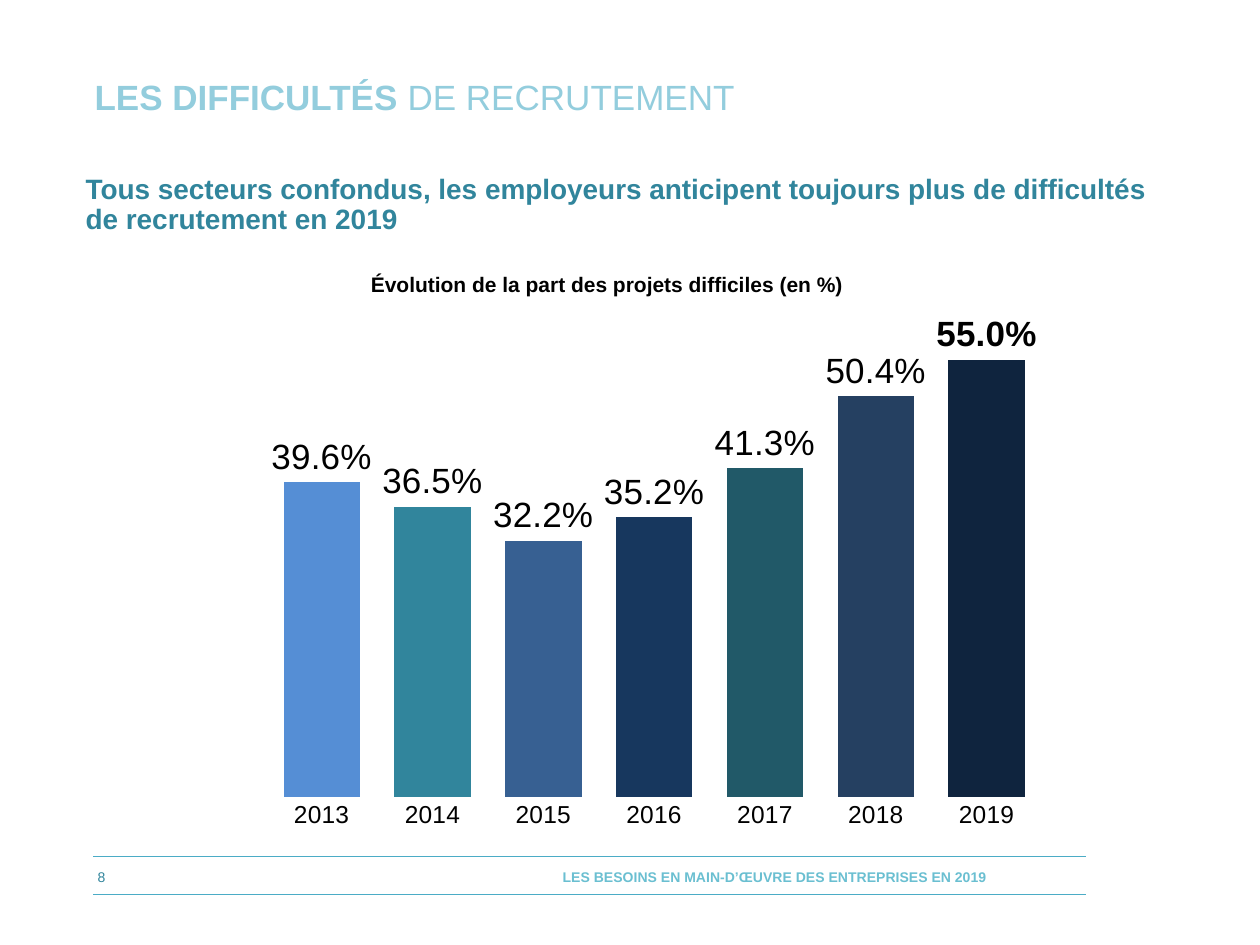
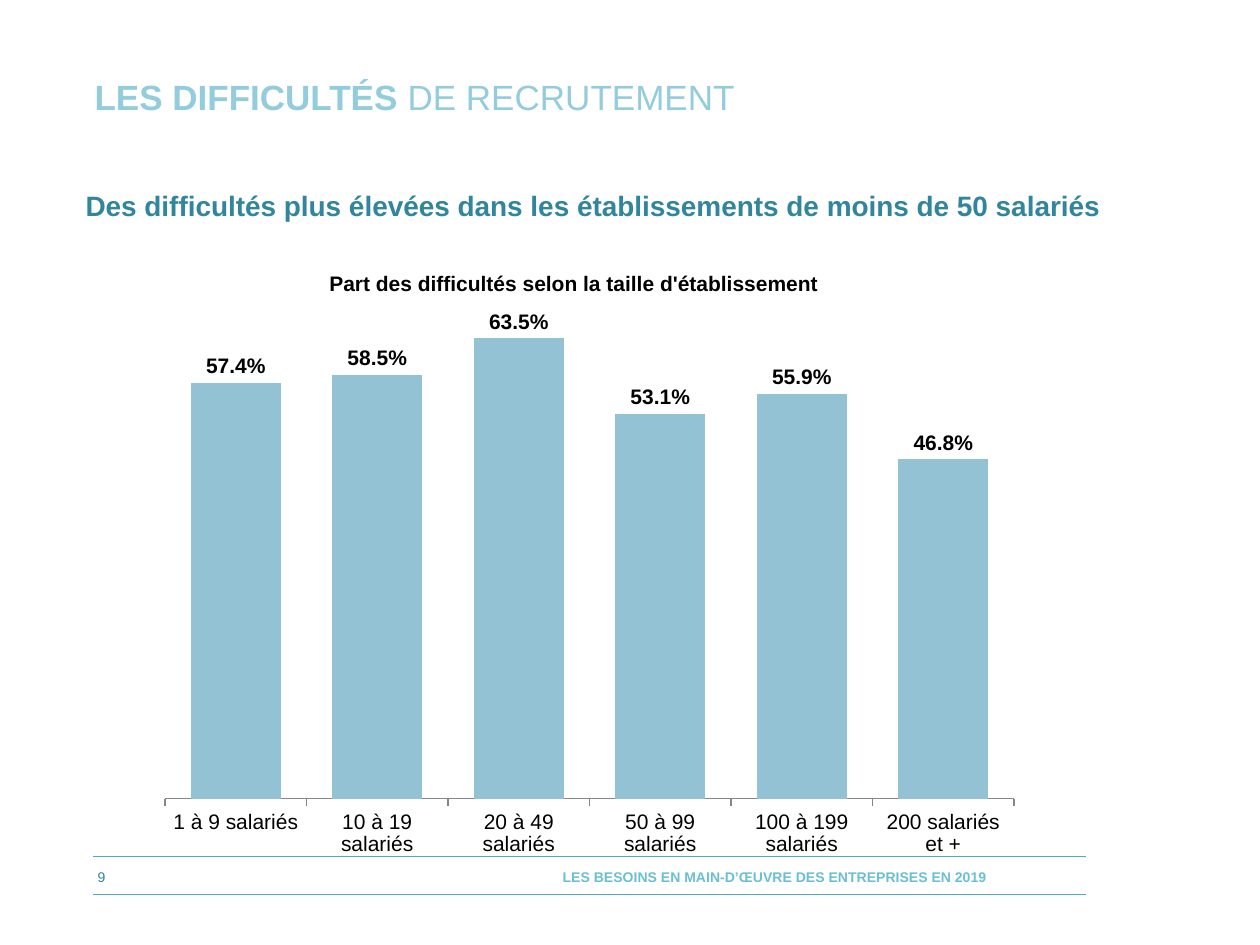
from pptx import Presentation
from pptx.chart.data import CategoryChartData
from pptx.dml.color import RGBColor
from pptx.enum.chart import XL_CHART_TYPE, XL_LABEL_POSITION, XL_TICK_MARK
from pptx.enum.shapes import MSO_CONNECTOR
from pptx.enum.text import MSO_ANCHOR, MSO_AUTO_SIZE, PP_ALIGN
from pptx.oxml import parse_xml
from pptx.oxml.ns import nsdecls, qn
from pptx.util import Pt

COLUMN = XL_CHART_TYPE.COLUMN_CLUSTERED
OUTSIDE = XL_LABEL_POSITION.OUTSIDE_END
NO_TICK, TICK_OUT = XL_TICK_MARK.NONE, XL_TICK_MARK.OUTSIDE
STRAIGHT = MSO_CONNECTOR.STRAIGHT
TOP, MIDDLE = MSO_ANCHOR.TOP, MSO_ANCHOR.MIDDLE
LEFT, CENTER = PP_ALIGN.LEFT, PP_ALIGN.CENTER
NO_FIT = MSO_AUTO_SIZE.NONE

FONT = "Arial"
COLORS = {
    "title": "93CDDD",
    "lead": "31859C",
    "foot": "6ABFD1",
    "rule": "4BACC6",
    "text": "000000",
    "axis": "868686",
    "bar": "93C2D4",
}
YEAR_BARS = ["558ED5", "31859C", "376092", "17375E", "215968", "254061", "0F243E"]
TITLE_BOX = (46.8, 42.5, 640, 28.8)
FOOT_BOX = (53.3, 489.6, 567.3, 21.6)
TITLE = [("LES DIFFICULTÉS ", True), ("DE RECRUTEMENT", False)]
FOOTER = "LES BESOINS EN MAIN-D’ŒUVRE DES ENTREPRISES EN 2019"

YEARS = {
    "2013": 0.396, "2014": 0.365, "2015": 0.322, "2016": 0.352,
    "2017": 0.413, "2018": 0.504, "2019": 0.55,
}
SIZES = {
    "1 à 9 salariés": 0.574, "10 à 19 salariés": 0.585,
    "20 à 49 salariés": 0.635, "50 à 99 salariés": 0.531,
    "100 à 199 salariés": 0.559, "200 salariés et +": 0.468,
}


def paint(fill, color):
    """Make a fill solid in a hex colour."""
    fill.solid()
    fill.fore_color.rgb = RGBColor.from_string(color)


def style(font, size, color="text", bold=False):
    """Set the face, size, colour and weight of a font."""
    font.name, font.size, font.bold = FONT, Pt(size), bold
    font.color.rgb = RGBColor.from_string(COLORS[color])


def write(shape, runs, size, color="text", align=LEFT, anchor=TOP,
          inset=(7.2, 3.6, 7.2, 3.6), space=1, after=0):
    """Fill a shape with one paragraph of (text, bold) runs."""
    frame = shape.text_frame
    frame.word_wrap, frame.auto_size = True, NO_FIT
    frame.vertical_anchor = anchor
    (frame.margin_left, frame.margin_top,
     frame.margin_right, frame.margin_bottom) = map(Pt, inset)
    para = frame.paragraphs[0]
    para.alignment, para.line_spacing = align, space
    para.space_before, para.space_after = Pt(0), Pt(after)
    for text, bold in runs:
        run = para.add_run()
        run.text = text
        style(run.font, size, color, bold)


def label(slide, box, text, size, bold=True, **form):
    """Add a text box with one run."""
    write(slide.shapes.add_textbox(*map(Pt, box)), [(text, bold)], size, **form)


def head(slide, box):
    """Place the slide title."""
    title = slide.shapes.title
    title.left, title.top, title.width, title.height = map(Pt, box)
    write(title, TITLE, 20, color="title", anchor=MIDDLE, space=0.9)


def foot(slide, box, number):
    """Draw the footer band: two rules, page number and report name."""
    left, top, width, height = box
    for y in (top, top + height):
        rule = slide.shapes.add_connector(
            STRAIGHT, *map(Pt, (left, y, left + width, y)))
        rule.line.width = Pt(0.5)
        paint(rule.line.fill, COLORS["rule"])
        props = rule._element.spPr
        props.append(parse_xml(f"<a:effectLst {nsdecls('a')}/>"))
    label(slide, (left + 205.2, top + 0.7, 368.6, height), FOOTER, 8,
          color="foot", align=CENTER, anchor=MIDDLE, inset=(7.2, 0, 7.2, 0))
    label(slide, (left - 15.1, top - 2.9, 39.6, 28.8), str(number), 8,
          bold=False, color="lead", align=CENTER, anchor=MIDDLE)


def fix_plot(chart, area):
    """Pin the inner plot area to fractions of the chart."""
    plot = chart.element.chart.plotArea
    for old in plot.findall(qn("c:layout")):
        plot.remove(old)
    parts = "".join(f'<c:{key} val="{val}"/>' for key, val in zip("xywh", area))
    plot.insert(0, parse_xml(
        f'<c:layout {nsdecls("c")}><c:manualLayout><c:layoutTarget val="inner"/>'
        f'<c:xMode val="edge"/><c:yMode val="edge"/>{parts}'
        '</c:manualLayout></c:layout>'))


def columns(slide, box, data, area, top, gap, size, bold=False):
    """Add a labelled column chart and return it."""
    source = CategoryChartData(number_format="0.0%")
    source.categories = list(data)
    source.add_series("Part", list(data.values()))
    chart = slide.shapes.add_chart(COLUMN, *map(Pt, box), source).chart
    chart.has_title = chart.has_legend = False
    style(chart.font, 10)
    fix_plot(chart, area)
    values = chart.value_axis
    values.minimum_scale, values.maximum_scale = 0, top
    values.has_major_gridlines = values.visible = False
    plot = chart.plots[0]
    plot.gap_width, plot.vary_by_categories = gap, False
    series = plot.series[0]
    series.invert_if_negative = False
    paint(series.format.fill, COLORS["bar"])
    marks = series.data_labels
    marks.show_value, marks.position = True, OUTSIDE
    marks.number_format, marks.number_format_is_linked = "0.0%", False
    style(marks.font, size, bold=bold)
    return chart


def lead(slide, box, text):
    """Add the key message under the title."""
    label(slide, box, text, 16, color="lead", inset=(7.2, 3.6, 0, 3.6),
          space=0.9, after=8)


def start(deck, number):
    """Add a slide with the shared title and footer."""
    slide = deck.slides.add_slide(deck.slide_layouts[5])
    head(slide, TITLE_BOX)
    foot(slide, FOOT_BOX, number)
    return slide


def trend(deck):
    """Build the slide on yearly change."""
    slide = start(deck, 8)
    label(slide, (170.6, 153.4, 345.6, 20.2),
          "Évolution de la part des projets difficiles (en %)", 12,
          align=CENTER, inset=(7.2, 3.6, 0, 3.6), space=0.9, after=8)
    lead(slide, (41.8, 96.5, 622, 42.5),
         "Tous secteurs confondus, les employeurs anticipent toujours plus "
         "de difficultés de recrutement en 2019")
    chart = columns(slide, (138.2, 173.5, 466.6, 309.6), YEARS,
                    (0.03, 0.03, 0.95, 0.88), 0.6, 45, 20)
    axis = chart.category_axis
    axis.major_tick_mark = NO_TICK
    axis.format.line.fill.background()
    style(axis.tick_labels.font, 14)
    points = chart.plots[0].series[0].points
    for i, color in enumerate(YEAR_BARS):
        paint(points[i].format.fill, color)
    last = points[len(YEARS) - 1].data_label
    style(last.font, 20, bold=True)
    last.position = OUTSIDE


def by_size(deck):
    """Build the slide on company size."""
    slide = start(deck, 9)
    lead(slide, (41.8, 106.6, 609.1, 24.5),
         "Des difficultés plus élevées dans les établissements de moins "
         "de 50 salariés")
    label(slide, (105.1, 151.2, 445.7, 21.6),
          "Part des difficultés selon la taille d'établissement", 12,
          align=CENTER)
    chart = columns(slide, (84.2, 159.8, 505.4, 337), SIZES,
                    (0.02, 0.02, 0.96, 0.86), 0.7, 57, 12, bold=True)
    axis = chart.category_axis
    axis.major_tick_mark = TICK_OUT
    paint(axis.format.line.fill, COLORS["axis"])
    style(axis.tick_labels.font, 12)


def main():
    """Build and save the deck."""
    deck = Presentation()
    deck.slide_width, deck.slide_height = Pt(720), Pt(540)
    trend(deck)
    by_size(deck)
    deck.save("out.pptx")


if __name__ == "__main__":
    main()
